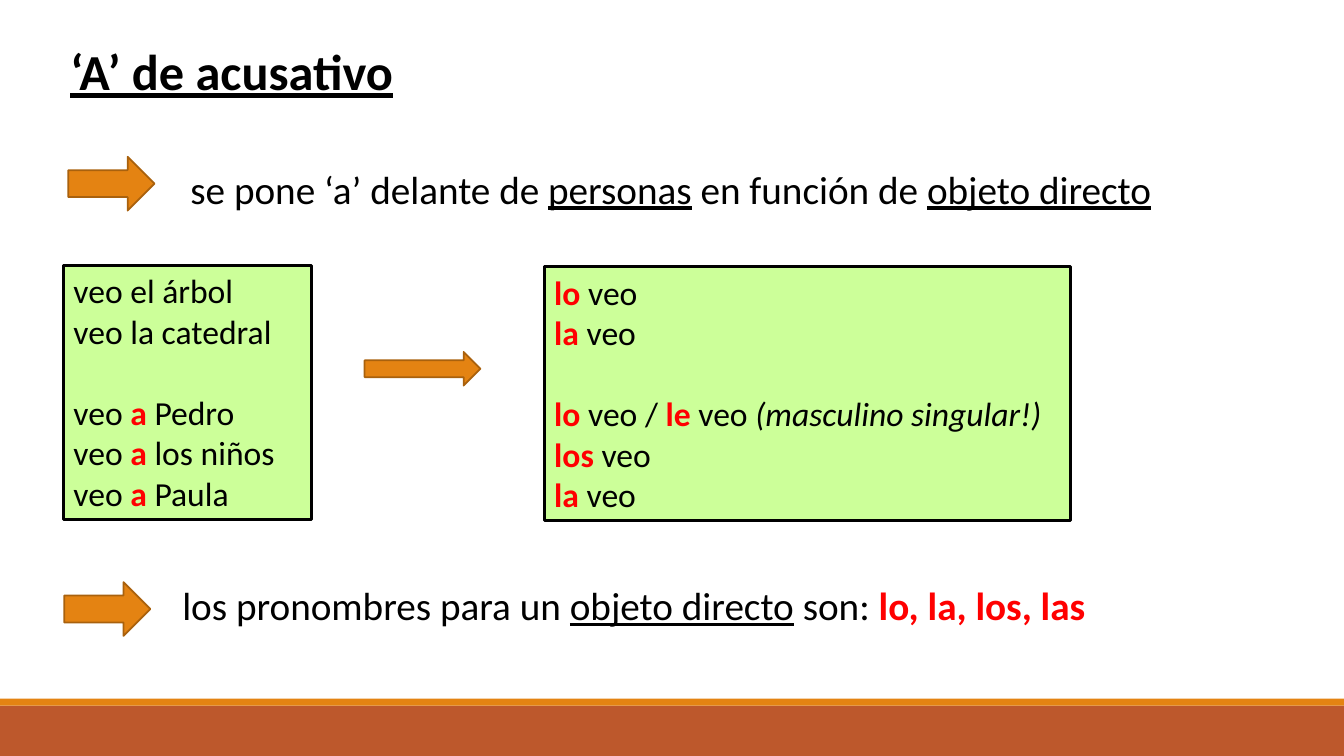
from dataclasses import dataclass

from pptx import Presentation
from pptx.dml.color import RGBColor
from pptx.enum.shapes import MSO_SHAPE
from pptx.enum.text import MSO_ANCHOR, MSO_AUTO_SIZE, PP_ALIGN
from pptx.shapes.autoshape import Shape
from pptx.slide import Slide
from pptx.util import Pt

RECTANGLE = MSO_SHAPE.RECTANGLE
RIGHT_ARROW = MSO_SHAPE.RIGHT_ARROW
TOP = MSO_ANCHOR.TOP
FIT_SHAPE = MSO_AUTO_SIZE.SHAPE_TO_FIT_TEXT
LEFT = PP_ALIGN.LEFT

BLACK = RGBColor(0x00, 0x00, 0x00)
RED = RGBColor(0xFF, 0x00, 0x00)
GREEN = RGBColor(0xCC, 0xFF, 0x99)
ORANGE = RGBColor(0xE4, 0x83, 0x12)
DARK_ORANGE = RGBColor(0xA9, 0x61, 0x0D)
RUST = RGBColor(0xBD, 0x58, 0x2C)

FONT = "Calibri"
SLIDE_WIDTH, SLIDE_HEIGHT = 960, 540
GROUP_GAP = 29.3  # one line of 24-point text


@dataclass(frozen=True)
class Box:
    left: float
    top: float
    width: float
    height: float


@dataclass(frozen=True)
class Piece:
    text: str
    key: bool = False  # bold and red
    underline: bool = False
    italic: bool = False


@dataclass(frozen=True)
class Line:
    pieces: tuple[Piece, ...]
    space_before: float = 0


@dataclass(frozen=True)
class Statement:
    box: Box
    size: float
    line: Line


@dataclass(frozen=True)
class Panel:
    box: Box
    lines: tuple[Line, ...]


def seeing(name: str, space_before: float = 0) -> Line:
    """An example with the personal 'a' before the object."""
    return Line((Piece("veo "), Piece("a", key=True), Piece(f" {name}")), space_before)


def pronoun(word: str) -> Line:
    """An example with a pronoun in place of the object."""
    return Line((Piece(f"{word} ", key=True), Piece("veo")))


BANDS = (
    (Box(0, 504, SLIDE_WIDTH, 36), RUST),
    (Box(0, 499, SLIDE_WIDTH, 5), ORANGE),
)

RULES = (
    Statement(Box(128.9, 114.5, 743, 41), 28, Line((
        Piece("se pone ‘a’ delante de "),
        Piece("personas", underline=True),
        Piece(" en función de "),
        Piece("objeto directo", underline=True),
    ))),
    Statement(Box(123.1, 411.8, 743, 41), 28, Line((
        Piece("los pronombres para un "),
        Piece("objeto directo", underline=True),
        Piece(" son: "),
        Piece("lo, la, los, las", key=True),
    ))),
)

EXAMPLES = (
    Panel(Box(45.4, 189.4, 177.1, 181.4), (
        Line((Piece("veo el árbol"),)),
        Line((Piece("veo la catedral"),)),
        seeing("Pedro", GROUP_GAP),
        seeing("los niños"),
        seeing("Paula"),
    )),
    Panel(Box(388.8, 190.4, 375.8, 181.4), (
        pronoun("lo"),
        pronoun("la"),
        Line((
            Piece("lo ", key=True),
            Piece("veo / "),
            Piece("le ", key=True),
            Piece("veo "),
            Piece("(masculino singular!)", italic=True),
        ), GROUP_GAP),
        pronoun("los"),
        pronoun("la"),
    )),
)

ARROWS = (
    Box(48.8, 112, 61.6, 38.4),
    Box(260.4, 251.4, 82.8, 24),
    Box(45.8, 415.8, 61.6, 38.4),
)


def add_block(slide: Slide, kind: MSO_SHAPE, box: Box, fill: RGBColor,
              outline: RGBColor | None = None, outline_width: float = 0) -> Shape:
    block = slide.shapes.add_shape(
        kind, Pt(box.left), Pt(box.top), Pt(box.width), Pt(box.height))
    block.shadow.inherit = False
    block.fill.solid()
    block.fill.fore_color.rgb = fill
    if outline is None:
        block.line.fill.background()
    else:
        block.line.color.rgb = outline
        block.line.width = Pt(outline_width)
    return block


def write_lines(holder: Shape, lines: tuple[Line, ...], size: float) -> None:
    frame = holder.text_frame
    frame.word_wrap = True
    frame.auto_size = FIT_SHAPE
    frame.vertical_anchor = TOP
    for index, line in enumerate(lines):
        paragraph = frame.add_paragraph() if index else frame.paragraphs[0]
        paragraph.alignment = LEFT
        paragraph.space_before = Pt(line.space_before)
        paragraph.font.name = FONT
        paragraph.font.size = Pt(size)
        for piece in line.pieces:
            run = paragraph.add_run()
            run.text = piece.text
            run.font.color.rgb = RED if piece.key else BLACK
            run.font.bold = piece.key
            run.font.underline = piece.underline
            run.font.italic = piece.italic


def add_statement(slide: Slide, statement: Statement) -> Shape:
    box = statement.box
    holder = slide.shapes.add_textbox(
        Pt(box.left), Pt(box.top), Pt(box.width), Pt(box.height))
    write_lines(holder, (statement.line,), statement.size)
    return holder


def main() -> None:
    presentation = Presentation()
    presentation.slide_width = Pt(SLIDE_WIDTH)
    presentation.slide_height = Pt(SLIDE_HEIGHT)
    slide = presentation.slides.add_slide(presentation.slide_layouts[6])

    # Footer bands
    for box, colour in BANDS:
        add_block(slide, RECTANGLE, box, colour)

    # Title
    heading = Line((Piece("‘A’ de acusativo", underline=True),))
    title = add_statement(slide, Statement(Box(43.2, 25.2, 359.3, 51), 36, heading))
    title.text_frame.paragraphs[0].runs[0].font.bold = True

    # Grammar rules
    for rule in RULES:
        add_statement(slide, rule)

    # Example panels
    for panel in EXAMPLES:
        block = add_block(slide, RECTANGLE, panel.box, GREEN, BLACK, 2.25)
        write_lines(block, panel.lines, 24)

    # Arrows
    for box in ARROWS:
        add_block(slide, RIGHT_ARROW, box, ORANGE, DARK_ORANGE, 1.25)

    presentation.save("out.pptx")


if __name__ == "__main__":
    main()
